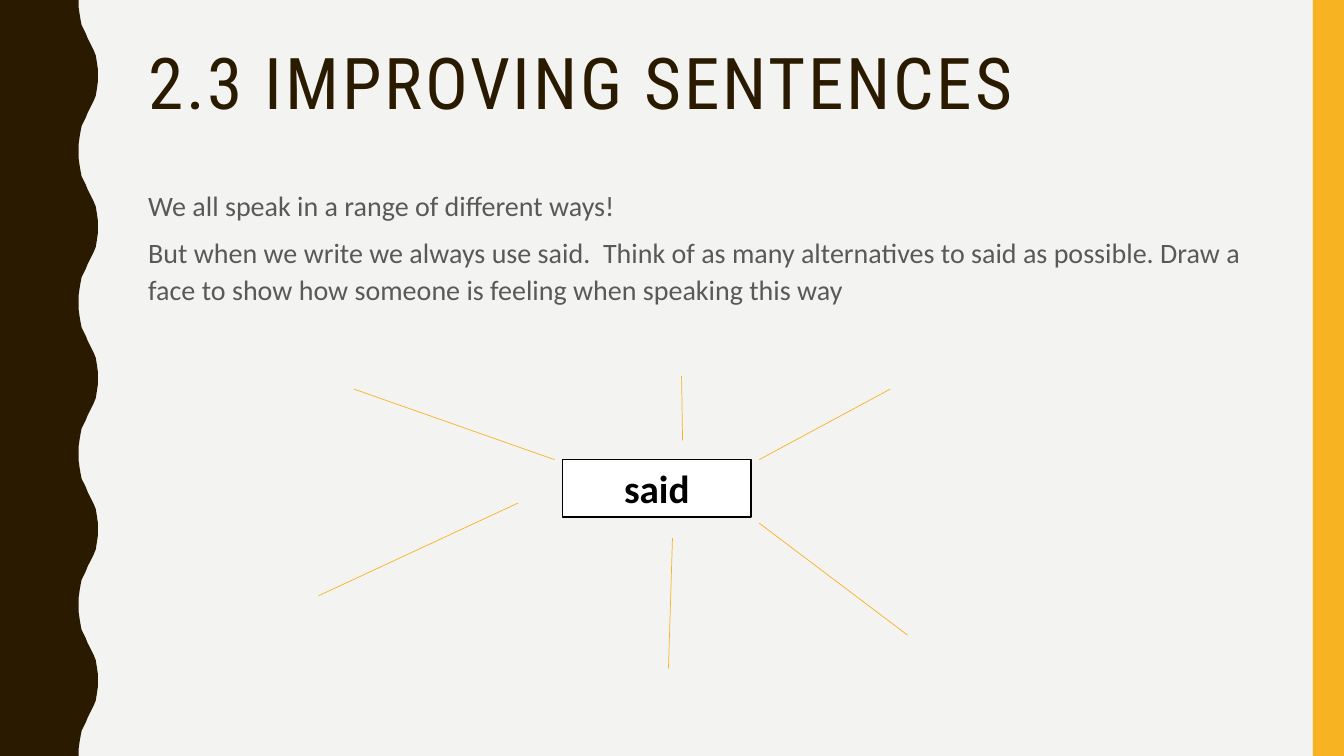
from lxml.etree import SubElement
from pptx import Presentation
from pptx.dml.color import RGBColor
from pptx.enum.shapes import MSO_CONNECTOR, MSO_SHAPE
from pptx.enum.text import MSO_ANCHOR, MSO_AUTO_SIZE, PP_ALIGN
from pptx.oxml.ns import qn
from pptx.util import Emu, Pt

PX = 9144
WIDTH, HEIGHT = 1333, 750

PAPER = RGBColor(0xF3, 0xF3, 0xF2)
BROWN = RGBColor(0x2A, 0x1A, 0x00)
AMBER = RGBColor(0xF8, 0xB3, 0x23)
GREY = RGBColor(0x59, 0x59, 0x59)
WHITE = RGBColor(0xFF, 0xFF, 0xFF)
BLACK = RGBColor(0x00, 0x00, 0x00)

WAVE_PERIOD = 150
WAVE_RISE = [(78, 0), (78, 7), (79, 14), (80, 20), (81, 25), (83, 29), (85, 33),
             (87, 38), (89, 42), (91, 46), (93, 50), (95, 55), (96, 61), (97, 68), (97, 75)]

BODY = [
    "We all speak in a range of different ways!",
    "But when we write we always use said.  Think of as many alternatives to said as "
    "possible. Draw a face to show how someone is feeling when speaking this way",
]

SPOKES = [
    ((195, 0), (325, -70)),
    ((195, 63), (342, 174)),
    ((109, 78), (105, 207)),
    ((119, -19), (118, -83)),
    ((-8, 0), (-207, -70)),
    ((-44, 43), (-242, 135)),
]


def px(*lengths):
    return [Emu(n * PX) for n in lengths]


def place(sp, box):
    sp.left, sp.top, sp.width, sp.height = px(*box)


def paint(sp, fill, line=None):
    sp.shadow.inherit = False
    sp.fill.solid()
    sp.fill.fore_color.rgb = fill
    if line is None:
        sp.line.fill.background()
    else:
        sp.line.color.rgb = line
        sp.line.width = Pt(1)


def write(sp, paragraphs, size, color, font="Calibri", bold=False, spacing=1.0, before=0,
          align=PP_ALIGN.LEFT, anchor=MSO_ANCHOR.TOP, fit=MSO_AUTO_SIZE.NONE, tracking=0):
    tf = sp.text_frame
    tf.word_wrap = True
    tf.auto_size = fit
    tf.vertical_anchor = anchor
    for i, text in enumerate(paragraphs):
        p = tf.paragraphs[0] if i == 0 else tf.add_paragraph()
        p.alignment = align
        p.line_spacing = spacing
        p.space_before = Pt(before)
        pPr = p._p.get_or_add_pPr()
        pPr.set("marL", "0")
        pPr.set("indent", "0")
        SubElement(pPr, qn("a:buNone"))
        r = p.add_run()
        r.text = text
        r.font.name = font
        r.font.size = Pt(size)
        r.font.bold = bold
        r.font.color.rgb = color
        if tracking:
            r._r.get_or_add_rPr().set("spc", str(tracking * 100))


def add_wave(s, box):
    left, top, _, height = box
    fall = [(x, WAVE_PERIOD - y) for x, y in reversed(WAVE_RISE[1:-1])]
    edge = [(left + x, top + start + y)
            for start in range(0, height, WAVE_PERIOD)
            for x, y in WAVE_RISE + fall]
    bottom = top + height
    edge += [(left + WAVE_RISE[0][0], bottom), (left, bottom)]
    builder = s.shapes.build_freeform(left, top, scale=PX)
    builder.add_line_segments(edge, close=True)
    paint(builder.convert_to_shape(), BROWN)


def add_side_bar(s, box):
    paint(s.shapes.add_shape(MSO_SHAPE.RECTANGLE, *px(*box)), AMBER)


def add_title(s, box):
    sp = s.shapes.title
    place(sp, box)
    write(sp, ["2.3 IMPROVING SENTENCES"], 51, BROWN, font="Roboto Condensed",
          spacing=0.9, tracking=2)


def add_body(s, box):
    sp = s.placeholders[1]
    place(sp, box)
    write(sp, BODY, 20, GREY, spacing=1.1, before=7)


def add_word_web(s, box):
    left, top = box[:2]
    sp = s.shapes.add_shape(MSO_SHAPE.RECTANGLE, *px(*box))
    paint(sp, WHITE, BLACK)
    write(sp, ["said"], 28, BLACK, bold=True, align=PP_ALIGN.CENTER,
          fit=MSO_AUTO_SIZE.SHAPE_TO_FIT_TEXT)
    for (x1, y1), (x2, y2) in SPOKES:
        spoke = s.shapes.add_connector(
            MSO_CONNECTOR.STRAIGHT, *px(left + x1, top + y1, left + x2, top + y2))
        spoke.line.color.rgb = AMBER
        spoke.line.width = Pt(0.5)
        SubElement(spoke._element.spPr, qn("a:effectLst"))


def main():
    prs = Presentation()
    prs.slide_width, prs.slide_height = px(WIDTH, HEIGHT)
    s = prs.slides.add_slide(prs.slide_layouts[1])
    s.background.fill.solid()
    s.background.fill.fore_color.rgb = PAPER
    add_wave(s, (0, 0, 97, HEIGHT))
    add_side_bar(s, (WIDTH - 31, 0, 31, HEIGHT))
    add_title(s, (137, 42, 1113, 163))
    add_body(s, (137, 179, 1136, 484))
    add_word_web(s, (558, 456, 187, 57))
    prs.save("out.pptx")


if __name__ == "__main__":
    main()
